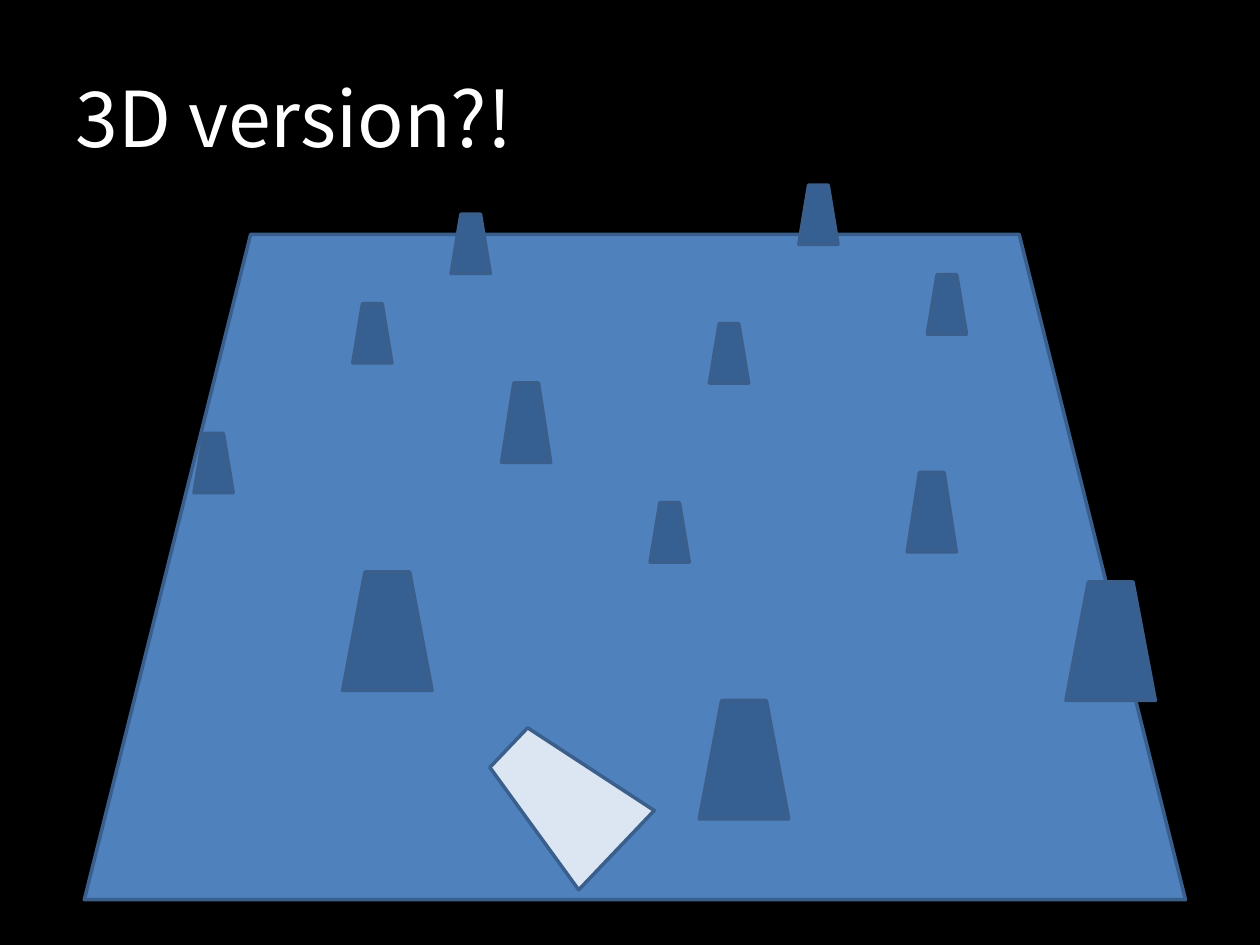
from pptx import Presentation
from pptx.dml.color import RGBColor
from pptx.enum.shapes import MSO_SHAPE
from pptx.enum.text import MSO_ANCHOR
from pptx.util import Pt


def color(code):
    return RGBColor.from_string(code)


class Deck:
    font = "Noto Sans CJK KR"
    back = "000000"
    text = "FFFFFF"
    edge = "3A5F8C"

    def __init__(self, width, height):
        self.file = Presentation()
        self.file.slide_width = Pt(width)
        self.file.slide_height = Pt(height)
        self.slide = self.file.slides.add_slide(self.file.slide_layouts[6])
        fill = self.slide.background.fill
        fill.solid()
        fill.fore_color.rgb = color(self.back)

    def title(self, words, *area):
        box = self.slide.shapes.add_textbox(*map(Pt, area))
        frame = box.text_frame
        frame.word_wrap = True
        frame.vertical_anchor = MSO_ANCHOR.MIDDLE
        run = frame.paragraphs[0].add_run()
        run.text = words
        run.font.name = self.font
        run.font.size = Pt(44)
        run.font.color.rgb = color(self.text)

    def block(self, fill, *area, turn=0):
        shape = self.slide.shapes.add_shape(MSO_SHAPE.TRAPEZOID, *map(Pt, area))
        shape.shadow.inherit = False
        shape.rotation = turn
        shape.fill.solid()
        shape.fill.fore_color.rgb = color(fill)
        shape.line.color.rgb = color(self.edge)
        shape.line.width = Pt(2)


FLOOR, PILLAR, PLAYER = "4F81BD", "376092", "DCE6F2"
PILLARS = {
    (22.4, 33.9): [
        (201.6, 173.5), (405.4, 185), (529.9, 157), (371.5, 287.3),
        (257.8, 122.4), (456.5, 105.8), (110.9, 247.7),
    ],
    (28.1, 45.4): [(286.6, 218.9), (518.4, 270)],
    (51.1, 67.7): [(195.8, 326.9), (399.6, 400.3), (609.1, 332.6)],
}


def main():
    deck = Deck(720, 540)
    deck.title("3D version?!", 36, 21.6, 648, 90)
    deck.block(FLOOR, 48.2, 133.9, 629.3, 380.2)
    deck.block(PLAYER, 290.2, 414, 62.6, 85, turn=313.6)
    for size, spots in PILLARS.items():
        for spot in spots:
            deck.block(PILLAR, *spot, *size)
    deck.file.save("out.pptx")


if __name__ == "__main__":
    main()
